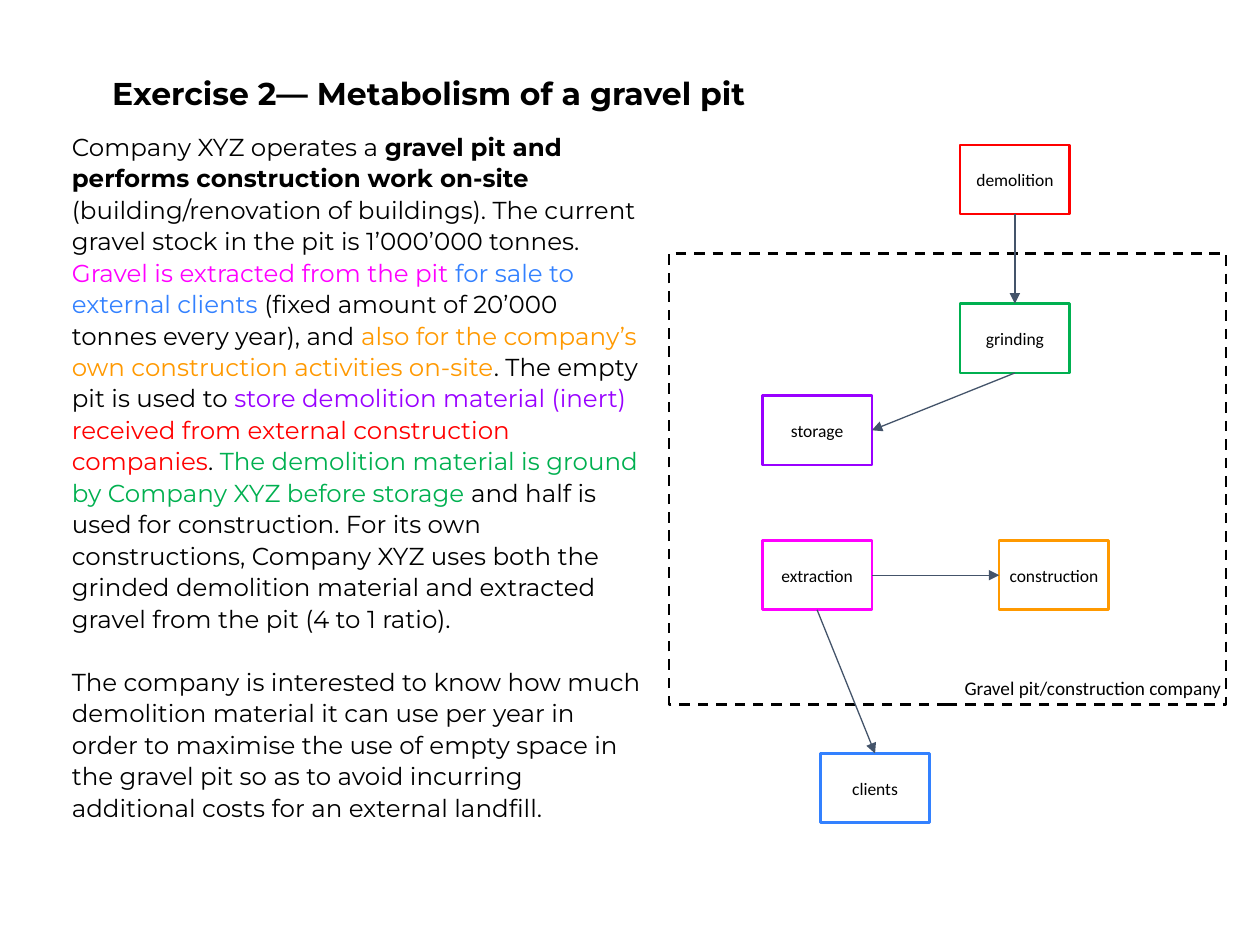
from dataclasses import dataclass

from lxml import etree
from pptx import Presentation
from pptx import util as u
from pptx.dml.color import RGBColor
from pptx.enum import dml, shapes, text
from pptx.oxml.ns import qn


@dataclass(frozen=True)
class Theme:
    black: str = "000000"
    arrow: str = "44546A"
    extraction: str = "FF00FF"
    clients: str = "3381FF"
    construction: str = "FF9900"
    storage: str = "9900FF"
    demolition: str = "FF0000"
    grinding: str = "00B050"
    prose_font: str = "Montserrat"
    label_font: str = "Calibri"
    title_size: float = 18
    body_size: float = 14
    caption_size: float = 11
    label_size: float = 10


THEME = Theme()
TOP, LEFT, BOTTOM, RIGHT = range(4)
BOX_WIDTH, BOX_HEIGHT = 0.87, 0.55

# Each run: text, colour, bold
STORY = [
    [
        ("Company XYZ operates a ", THEME.black, False),
        ("gravel pit and performs construction work on-site", THEME.black, True),
        (" (building/renovation of buildings). The current gravel stock in the pit "
         "is 1’000’000 tonnes. ", THEME.black, False),
        ("Gravel is extracted from the pit ", THEME.extraction, False),
        ("for sale to external clients", THEME.clients, False),
        (" (fixed amount of 20’000 tonnes every year), and ", THEME.black, False),
        ("also for the company’s own construction activities on-site",
         THEME.construction, False),
        (". The empty pit is used to", THEME.black, False),
        (" store demolition material (inert) ", THEME.storage, False),
        ("received from external construction companies", THEME.demolition, False),
        (". ", THEME.black, False),
        ("The demolition material is ground by Company XYZ before storage",
         THEME.grinding, False),
        (" and half is used for construction. For its own constructions, Company XYZ "
         "uses both the grinded demolition material and extracted gravel from the pit "
         "(4 to 1 ratio).", THEME.black, False),
    ],
    [
        ("The company is interested to know how much demolition material it can use "
         "per year in order to maximise the use of empty space in the gravel pit so as "
         "to avoid incurring additional costs for an external landfill.",
         THEME.black, False),
    ],
]

# Process: left, top, outline colour
PROCESSES = {
    "extraction": (6.05, 4.29, THEME.extraction),
    "clients": (6.51, 5.98, THEME.clients),
    "construction": (7.93, 4.29, THEME.construction),
    "storage": (6.05, 3.14, THEME.storage),
    "demolition": (7.62, 1.15, THEME.demolition),
    "grinding": (7.62, 2.41, THEME.grinding),
}

FLOWS = [
    ("extraction", BOTTOM, "clients", TOP),
    ("extraction", RIGHT, "construction", LEFT),
    ("demolition", BOTTOM, "grinding", TOP),
    ("grinding", BOTTOM, "storage", RIGHT),
]


class SlideBuilder:
    def __init__(self, slide, theme):
        self.slide = slide
        self.theme = theme

    def place(self, shape, left, top, width, height):
        shape.left, shape.top = u.Inches(left), u.Inches(top)
        shape.width, shape.height = u.Inches(width), u.Inches(height)

    def frame_text(self, shape, inset_x, inset_y, anchor, wrap=True):
        frame = shape.text_frame
        frame.auto_size = text.MSO_AUTO_SIZE.NONE
        frame.word_wrap = wrap
        frame.vertical_anchor = anchor
        frame.margin_left = frame.margin_right = u.Inches(inset_x)
        frame.margin_top = frame.margin_bottom = u.Inches(inset_y)
        return frame

    def add_span(self, para, words, font, size, color, bold=False):
        span = para.add_run()
        span.text = words
        span.font.name = font
        span.font.size = u.Pt(size)
        span.font.bold = bold
        span.font.color.rgb = RGBColor.from_string(color)

    def title(self, words, *area):
        shape = self.slide.shapes.title
        self.place(shape, *area)
        frame = self.frame_text(shape, 0.1, 0.1, text.MSO_ANCHOR.TOP)
        para = frame.paragraphs[0]
        para.alignment = text.PP_ALIGN.LEFT
        self.add_span(para, words, self.theme.prose_font, self.theme.title_size,
                      self.theme.black, True)

    def body(self, paragraphs, *area):
        shape = self.slide.placeholders[1]
        self.place(shape, *area)
        frame = self.frame_text(shape, 0.1, 0.05, text.MSO_ANCHOR.TOP)
        for index, runs in enumerate(paragraphs):
            para = frame.add_paragraph() if index else frame.paragraphs[0]
            properties = para._p.get_or_add_pPr()
            properties.set("marL", "0")
            properties.set("indent", "0")
            etree.SubElement(properties, qn("a:buNone"))
            para.line_spacing = 1.07
            para.space_before = u.Pt(18.25 if index else 0)
            for words, color, bold in runs:
                self.add_span(para, words, self.theme.prose_font,
                              self.theme.body_size, color, bold)

    def outline(self, color, left, top, width, height):
        box = self.slide.shapes.add_shape(
            shapes.MSO_SHAPE.RECTANGLE, u.Inches(left), u.Inches(top),
            u.Inches(width), u.Inches(height))
        box.shadow.inherit = False
        box.fill.background()
        box.line.color.rgb = RGBColor.from_string(color)
        box.line.width = u.Pt(1.5)
        return box

    def boundary(self, *area):
        self.outline(self.theme.black, *area).line.dash_style = dml.MSO_LINE.DASH

    def process(self, name, left, top, color):
        box = self.outline(color, left, top, BOX_WIDTH, BOX_HEIGHT)
        frame = self.frame_text(box, 0.05, 0.05, text.MSO_ANCHOR.MIDDLE, wrap=False)
        para = frame.paragraphs[0]
        para.alignment = text.PP_ALIGN.CENTER
        self.add_span(para, name, self.theme.label_font, self.theme.label_size,
                      self.theme.black)
        return box

    def flow(self, source, source_side, target, target_side):
        arrow = self.slide.shapes.add_connector(
            shapes.MSO_CONNECTOR.STRAIGHT, 0, 0, 0, 0)
        arrow.begin_connect(source, source_side)
        arrow.end_connect(target, target_side)
        arrow.line.color.rgb = RGBColor.from_string(self.theme.arrow)
        arrow.line.width = u.Pt(0.75)
        etree.SubElement(arrow.line._get_or_add_ln(), qn("a:tailEnd"), type="triangle")
        etree.SubElement(arrow._element.spPr, qn("a:effectLst"))

    def caption(self, words, *area):
        box = self.slide.shapes.add_textbox(0, 0, 0, 0)
        self.place(box, *area)
        para = self.frame_text(box, 0.1, 0.1, text.MSO_ANCHOR.TOP).paragraphs[0]
        para.alignment = text.PP_ALIGN.CENTER
        self.add_span(para, words, self.theme.label_font, self.theme.caption_size,
                      self.theme.black)


def main():
    deck = Presentation()
    deck.slide_width, deck.slide_height = u.Inches(10), u.Inches(7.5)
    page = SlideBuilder(deck.slides.add_slide(deck.slide_layouts[1]), THEME)

    page.title("Exercise 2— Metabolism of a gravel pit", 0.79, 0.49, 8.55, 0.55)
    page.body(STORY, 0.47, 0.98, 4.75, 5.55)
    page.boundary(5.31, 2.01, 4.42, 3.58)
    boxes = {name: page.process(name, *place) for name, place in PROCESSES.items()}
    for source, source_side, target, target_side in FLOWS:
        page.flow(boxes[source], source_side, boxes[target], target_side)
    page.caption("Gravel pit/construction company", 7.36, 5.27, 2.63, 0.39)

    deck.save("out.pptx")


if __name__ == "__main__":
    main()
